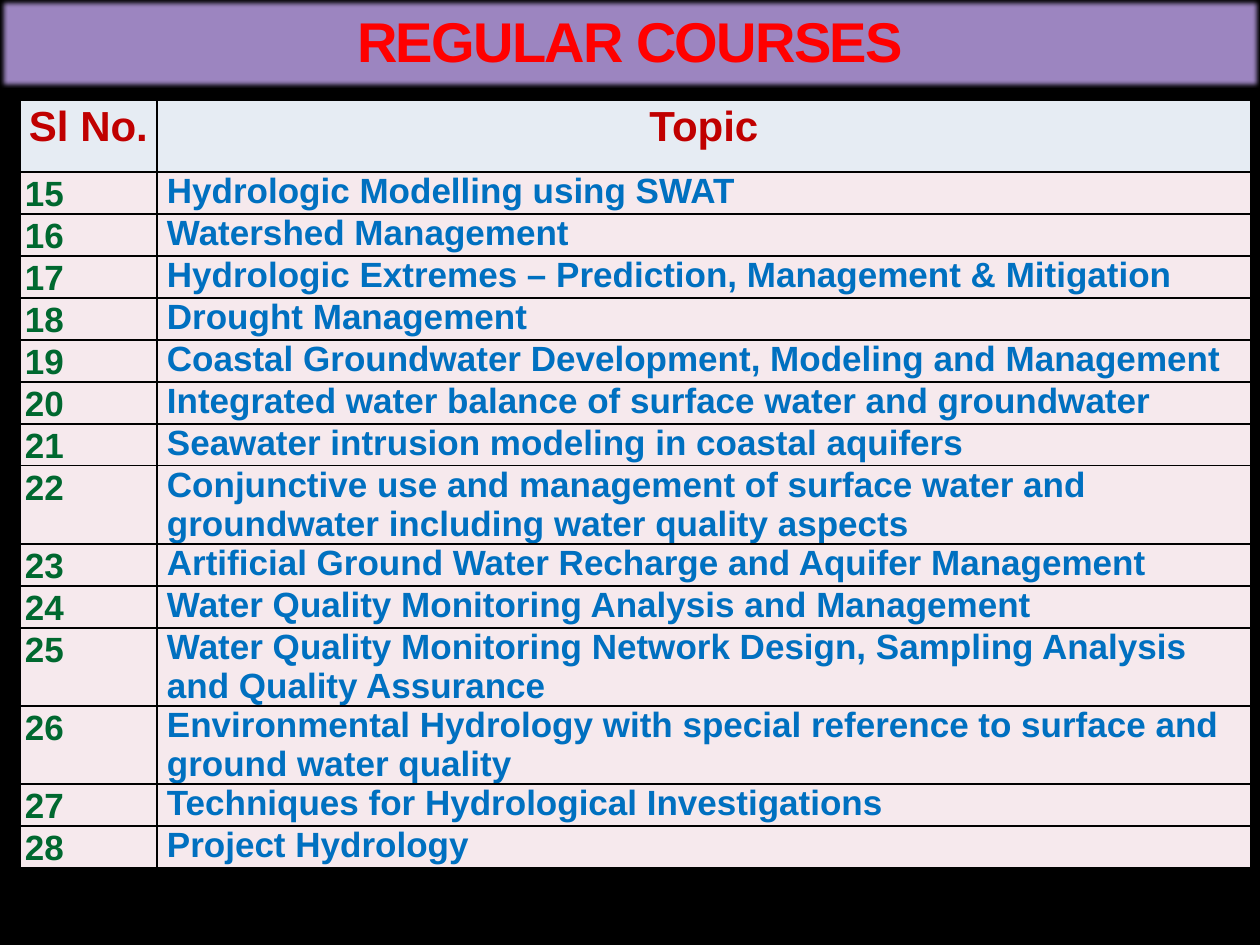
from lxml import etree
from pptx import Presentation
from pptx.dml.color import RGBColor
from pptx.enum.text import MSO_ANCHOR, MSO_AUTO_SIZE, PP_ALIGN
from pptx.oxml.ns import qn
from pptx.util import Emu, Pt

CENTER, JUSTIFY, LEFT = PP_ALIGN.CENTER, PP_ALIGN.JUSTIFY, PP_ALIGN.LEFT
MIDDLE, NO_FIT = MSO_ANCHOR.MIDDLE, MSO_AUTO_SIZE.NONE

TITLE = "REGULAR COURSES"
HEADERS = ("Sl No.", "Topic")
FIRST_NUMBER = 15
TOPICS = [
    "Hydrologic Modelling using SWAT",
    "Watershed Management",
    "Hydrologic Extremes – Prediction, Management & Mitigation",
    "Drought Management",
    "Coastal Groundwater Development, Modeling and Management",
    "Integrated water balance of surface water and groundwater",
    "Seawater intrusion modeling in coastal aquifers",
    "Conjunctive use and management of surface water and "
    "groundwater including water quality aspects",
    "Artificial Ground Water Recharge and Aquifer Management",
    "Water Quality Monitoring Analysis and Management",
    "Water Quality Monitoring Network Design, Sampling Analysis "
    "and Quality Assurance",
    "Environmental Hydrology with special reference to surface and "
    "ground water quality",
    "Techniques for Hydrological Investigations",
    "Project Hydrology",
]
COLORS = {
    "background": "000000", "border": "000000",
    "banner": "9C85C0", "title": "FF0000",
    "header_fill": "E6ECF3", "header": "C00000",
    "row_fill": "F6E9ED", "number": "00682F", "topic": "0070C0",
}
FONT = "Arial"
COL_WIDTHS = (137, 1094)
HEADER_H, LINE_H, TWO_LINE_H = 72, 42, 78
CHARS_PER_LINE = 60
PAD = 5


def px(n):
    return Emu(round(n * 914400 / 126))


def rgb(name):
    return RGBColor.from_string(COLORS[name])


def style_runs(p, size, color):
    for r in p.runs:
        r.font.name, r.font.size, r.font.bold = FONT, Pt(size), True
        r.font.color.rgb = rgb(color)


def add_borders(cell):
    """Draw a thin line on all sides; lines must precede the fill."""
    tc_pr = cell._tc.get_or_add_tcPr()
    for i, side in enumerate(("lnL", "lnR", "lnT", "lnB")):
        ln = etree.Element(qn(f"a:{side}"), w=str(Pt(1)))
        fill = etree.SubElement(ln, qn("a:solidFill"))
        etree.SubElement(fill, qn("a:srgbClr"), val=COLORS["border"])
        tc_pr.insert(i, ln)


def fill_cell(cell, text, size, color, fill, align, spacing=None, indent=0):
    cell.margin_left = cell.margin_right = px(PAD)
    cell.margin_top = cell.margin_bottom = 0
    cell.fill.solid()
    cell.fill.fore_color.rgb = rgb(fill)
    add_borders(cell)
    p = cell.text_frame.paragraphs[0]
    p.text = text
    p.alignment = align
    if spacing:
        p.line_spacing = spacing
    if indent:
        p._p.get_or_add_pPr().set("marL", str(px(indent)))
    style_runs(p, size, color)


def add_banner(slide):
    sp = slide.shapes.title
    sp.left, sp.top, sp.width, sp.height = 0, 0, px(1260), px(88)
    sp.fill.solid()
    sp.fill.fore_color.rgb = rgb("banner")
    effects = etree.SubElement(sp._element.spPr, qn("a:effectLst"))
    etree.SubElement(effects, qn("a:softEdge"), rad=str(Pt(2.5)))
    tf = sp.text_frame
    tf.text = TITLE
    tf.vertical_anchor, tf.auto_size = MIDDLE, NO_FIT
    p = tf.paragraphs[0]
    p.alignment, p.line_spacing = CENTER, 0.9
    style_runs(p, 32, "title")
    p.runs[0].font._element.set("spc", "-100")


def add_courses(slide):
    heights = [HEADER_H] + [TWO_LINE_H if len(t) > CHARS_PER_LINE else LINE_H
                            for t in TOPICS]
    table = slide.shapes.add_table(
        len(heights), len(COL_WIDTHS), px(20), px(100),
        px(sum(COL_WIDTHS)), px(sum(heights))).table
    table.first_row = table.horz_banding = False
    for col, w in zip(table.columns, COL_WIDTHS):
        col.width = px(w)
    for row, h in zip(table.rows, heights):
        row.height = px(h)
    for c, text in enumerate(HEADERS):
        fill_cell(table.cell(0, c), text, 24, "header", "header_fill",
                  CENTER, spacing=1.07)
    for i, topic in enumerate(TOPICS):
        fill_cell(table.cell(i + 1, 0), str(FIRST_NUMBER + i), 20, "number",
                  "row_fill", JUSTIFY, spacing=1.07)
        fill_cell(table.cell(i + 1, 1), topic, 20, "topic", "row_fill",
                  LEFT, indent=PAD)


def main():
    prs = Presentation()
    prs.slide_width, prs.slide_height = px(1260), px(945)
    slide = prs.slides.add_slide(prs.slide_layouts[5])
    slide.background.fill.solid()
    slide.background.fill.fore_color.rgb = rgb("background")
    add_banner(slide)
    add_courses(slide)
    prs.save("out.pptx")


if __name__ == "__main__":
    main()
